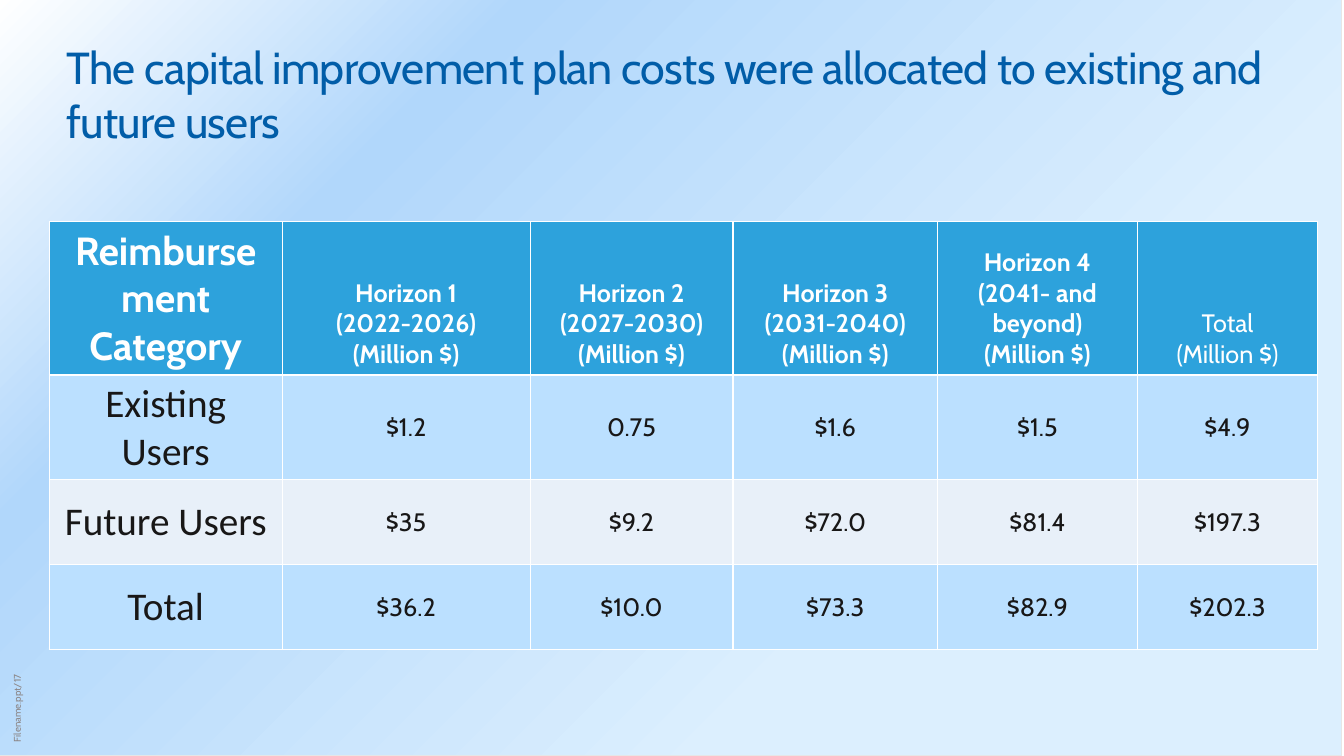
from dataclasses import dataclass

from lxml.etree import SubElement
from pptx import Presentation
from pptx.dml.color import RGBColor
from pptx.enum.shapes import MSO_SHAPE
from pptx.enum.text import MSO_ANCHOR as Anchor, PP_ALIGN as Align
from pptx.oxml import parse_xml
from pptx.oxml.ns import nsdecls, qn
from pptx.util import Cm, Pt


@dataclass(frozen=True)
class Theme:
    title: str = "015DA8"
    text: str = "181717"
    white: str = "FFFFFF"
    header: str = "2DA2DC"
    bands: tuple = ("BBE0FF", "E8F0F9")
    frame: str = "E7E6E6"
    footer: str = "8B8585"
    gradient: tuple = ((30, "DCEFFE"), (75, "B1D7FB"), (100, "FFFFFF"))
    font: str = "Cabin"
    label_font: str = "Calibri"
    title_size: int = 32
    label_size: int = 28
    cell_size: int = 18
    footer_size: int = 7


THEME = Theme()
TITLE = "The capital improvement plan costs were allocated to existing and future users"
COLUMN_WIDTHS = (5.87, 6.25, 5.11, 5.16, 5.03, 4.55)
ROW_HEIGHTS = (3.86, 2.64, 2.14, 2.14)
HEADERS = (
    "Reimbursement Category",
    "Horizon 1\n(2022-2026)\n(Million $)",
    "Horizon 2\n(2027-2030)\n(Million $)",
    "Horizon 3\n(2031-2040)\n(Million $)",
    "Horizon 4\n(2041- and beyond)\n(Million $)",
    "Total\n(Million $)",
)
COSTS = (
    ("Existing Users", "$1.2", "0.75", "$1.6", "$1.5", "$4.9"),
    ("Future Users", "$35", "$9.2", "$72.0", "$81.4", "$197.3"),
    ("Total", "$36.2", "$10.0", "$73.3", "$82.9", "$202.3"),
)


def set_font(paragraph, size, color, name=THEME.font, bold=False):
    font = paragraph.font
    font.name, font.size, font.bold = name, Pt(size), bold
    font.color.rgb = RGBColor.from_string(color)


def add_backdrop(slide, left, top, width, height):
    """Cover the box with a radial gradient, behind the title."""
    backdrop = slide.shapes.add_shape(MSO_SHAPE.RECTANGLE, left, top, width, height)
    backdrop.shadow.inherit = False
    backdrop.line.color.rgb = RGBColor.from_string(THEME.frame)
    backdrop.line.width = Pt(0.75)
    stops = "".join(
        f'<a:gs pos="{position * 1000}"><a:srgbClr val="{color}"/></a:gs>'
        for position, color in THEME.gradient
    )
    gradient = parse_xml(
        f'<a:gradFill {nsdecls("a")}><a:gsLst>{stops}</a:gsLst>'
        '<a:path path="circle"><a:fillToRect l="100000" t="100000"/></a:path></a:gradFill>'
    )
    backdrop.element.spPr.find(qn("a:prstGeom")).addnext(gradient)
    slide.shapes.title.element.addprevious(backdrop.element)


def add_title(slide, left, top, width, height):
    title = slide.shapes.title
    title.left, title.top, title.width, title.height = left, top, width, height
    frame = title.text_frame
    frame.text = TITLE
    frame.vertical_anchor = Anchor.MIDDLE
    paragraph = frame.paragraphs[0]
    paragraph.alignment = Align.LEFT
    set_font(paragraph, THEME.title_size, THEME.title)
    paragraph.runs[0]._r.get_or_add_rPr().set("spc", "-50")


def add_file_label(slide, left, top, width, height):
    """Set the file name upright along the left edge."""
    label = slide.shapes.add_textbox(left, top, width, height)
    label.rotation = 270
    frame = label.text_frame
    frame.word_wrap = True
    frame.vertical_anchor = Anchor.BOTTOM
    frame.margin_left = frame.margin_right = Cm(0.13)
    frame.text = "Filename.ppt/17"
    set_font(frame.paragraphs[0], THEME.footer_size, THEME.footer)


def set_borders(cell):
    properties = cell._tc.get_or_add_tcPr()
    for index, side in enumerate(("lnL", "lnR", "lnT", "lnB")):
        line = parse_xml(
            f'<a:{side} {nsdecls("a")} w="{Pt(1)}"><a:solidFill/></a:{side}>'
        )
        SubElement(line[0], qn("a:srgbClr"), val=THEME.white)
        properties.insert(index, line)


def fill_cell(cell, text, row, column, is_last):
    is_header, is_label = row == 0, column == 0
    cell.text = text
    cell.fill.solid()
    cell.fill.fore_color.rgb = RGBColor.from_string(
        THEME.header if is_header else THEME.bands[(row - 1) % 2]
    )
    cell.vertical_anchor = Anchor.BOTTOM if is_header else Anchor.MIDDLE
    is_cost = not is_header and not is_label
    if is_cost:
        cell.margin_left = cell.margin_right = Cm(0.18)
        cell.margin_top = cell.margin_bottom = 0
    for paragraph in cell.text_frame.paragraphs:
        paragraph.alignment = Align.CENTER
        if is_cost:
            paragraph.space_before = paragraph.space_after = Pt(2)
        set_font(
            paragraph,
            THEME.label_size if is_label else THEME.cell_size,
            THEME.white if is_header else THEME.text,
            THEME.label_font if is_label and not is_header else THEME.font,
            is_header and not is_last,
        )
    set_borders(cell)


def add_cost_table(slide, left, top):
    rows = (HEADERS, *COSTS)
    table = slide.shapes.add_table(
        len(rows), len(HEADERS), left, top, Cm(sum(COLUMN_WIDTHS)), Cm(sum(ROW_HEIGHTS))
    ).table
    table.horz_banding = False
    for column, width in zip(table.columns, COLUMN_WIDTHS):
        column.width = Cm(width)
    for row, height in zip(table.rows, ROW_HEIGHTS):
        row.height = Cm(height)
    for row, texts in enumerate(rows):
        for column, text in enumerate(texts):
            is_last = column == len(texts) - 1
            fill_cell(table.cell(row, column), text, row, column, is_last)


def main():
    presentation = Presentation()
    presentation.slide_width, presentation.slide_height = Cm(33.87), Cm(19.05)
    slide = presentation.slides.add_slide(presentation.slide_layouts[5])
    add_backdrop(slide, Cm(-0.05), 0, Cm(33.87), Cm(19.05))
    add_file_label(slide, Cm(-2.97), Cm(15.16), Cm(6.78), Cm(0.56))
    add_title(slide, Cm(1.42), Cm(0.84), Cm(31.04), Cm(3.05))
    add_cost_table(slide, Cm(1.24), Cm(5.59))
    presentation.save("out.pptx")


if __name__ == "__main__":
    main()
